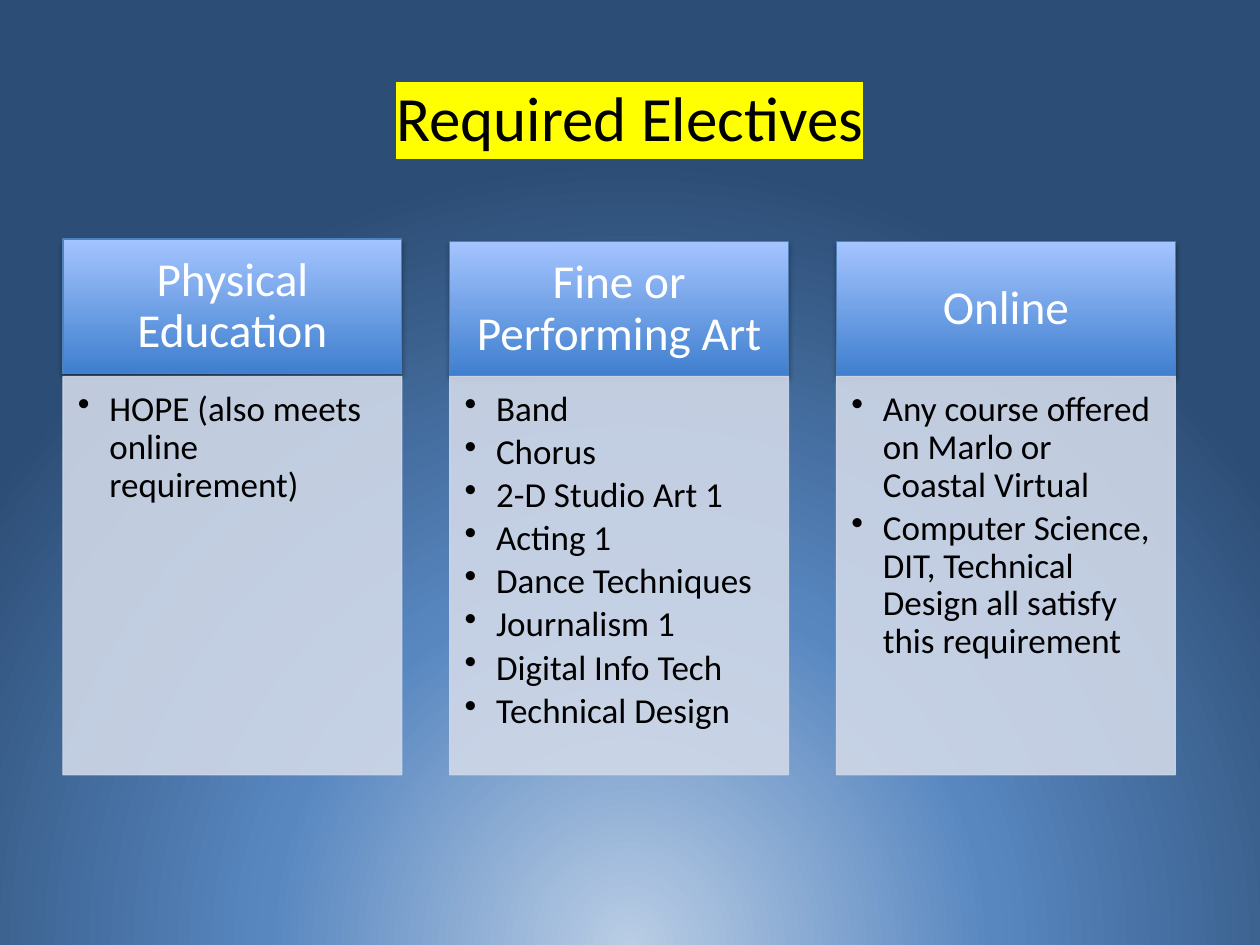
from lxml import etree
from pptx import Presentation
from pptx.dml.color import RGBColor
from pptx.enum.shapes import MSO_SHAPE
from pptx.enum.text import MSO_ANCHOR, PP_ALIGN
from pptx.oxml import parse_xml
from pptx.oxml.ns import nsdecls, qn
from pptx.util import Pt

RECTANGLE = MSO_SHAPE.RECTANGLE
CENTER, LEFT = PP_ALIGN.CENTER, PP_ALIGN.LEFT
MIDDLE, TOP = MSO_ANCHOR.MIDDLE, MSO_ANCHOR.TOP

FONT = "Calibri"
TITLE_ONLY = 5
COLUMN_LEFT, COLUMN_STEP, COLUMN_WIDTH = 36, 221, 193.6
HEADER_HEIGHT = 77
LIST_TOP, LIST_HEIGHT = 215.2, 227.5

# Header, header top, courses
ELECTIVES = [
    ("Physical Education", 136.6, ["HOPE (also meets online requirement)"]),
    ("Fine or Performing Art", 138.2, [
        "Band", "Chorus", "2-D Studio Art 1", "Acting 1", "Dance Techniques",
        "Journalism 1", "Digital Info Tech", "Technical Design"]),
    ("Online", 138.2, [
        "Any course offered on Marlo or Coastal Virtual",
        "Computer Science, DIT, Technical Design all satisfy this requirement"]),
]


def color(hex_code):
    return RGBColor.from_string(hex_code)


def set_background(slide, stops):
    """Fill the slide with a circular gradient centred below its lower edge."""
    slide.background.fill.solid()
    solid = slide._element.find(".//" + qn("p:bgPr")).find(qn("a:solidFill"))
    stop_xml = "".join(
        f'<a:gs pos="{position * 1000}"><a:srgbClr val="{hex_code}"/></a:gs>'
        for position, hex_code in stops)
    gradient = parse_xml(
        f'<a:gradFill {nsdecls("a")} rotWithShape="1"><a:gsLst>{stop_xml}</a:gsLst>'
        '<a:path path="circle"><a:fillToRect l="50000" t="130000" r="50000" b="-30000"/>'
        '</a:path></a:gradFill>')
    solid.getparent().replace(solid, gradient)


def set_alpha(shape, percent):
    """Apply the opacity to both the fill and the outline."""
    for rgb in shape._element.spPr.iter(qn("a:srgbClr")):
        etree.SubElement(rgb, qn("a:alpha")).set("val", str(percent * 1000))


def add_soft_shadow(shape):
    effects = shape._element.spPr.find(qn("a:effectLst"))
    effects.append(parse_xml(
        f'<a:outerShdw {nsdecls("a")} blurRad="{Pt(3.1)}" dist="{Pt(1.8)}" '
        'dir="5400000" rotWithShape="0"><a:srgbClr val="000000">'
        '<a:alpha val="35000"/></a:srgbClr></a:outerShdw>'))


def add_bullet(paragraph):
    properties = paragraph._p.get_or_add_pPr()
    properties.set("marL", str(Pt(18)))
    properties.set("indent", str(-Pt(18)))
    etree.SubElement(properties, qn("a:buChar")).set("char", "•")


def format_text(paragraph, size, hex_code, align):
    paragraph.alignment = align
    for run in paragraph.runs:
        run.font.name = FONT
        run.font.size = Pt(size)
        run.font.color.rgb = color(hex_code)


def add_title(slide, text):
    title = slide.shapes.title
    title.left, title.top, title.width, title.height = Pt(36), Pt(21.6), Pt(648), Pt(90)
    title.text_frame.text = text
    title.text_frame.vertical_anchor = MIDDLE
    paragraph = title.text_frame.paragraphs[0]
    format_text(paragraph, 36, "000000", CENTER)
    text_fill = paragraph.runs[0]._r.get_or_add_rPr().find(qn("a:solidFill"))
    text_fill.addnext(parse_xml(
        f'<a:highlight {nsdecls("a")}><a:srgbClr val="FFFF00"/></a:highlight>'))


def add_panel(slide, left, top, height, line_color, anchor, margins):
    panel = slide.shapes.add_shape(
        RECTANGLE, Pt(left), Pt(top), Pt(COLUMN_WIDTH), Pt(height))
    panel.shadow.inherit = False
    panel.line.color.rgb = color(line_color)
    panel.line.width = Pt(0.75)
    frame = panel.text_frame
    frame.word_wrap = True
    frame.vertical_anchor = anchor
    (frame.margin_left, frame.margin_top,
     frame.margin_right, frame.margin_bottom) = map(Pt, margins)
    return panel


def add_header(slide, left, top, text):
    header = add_panel(slide, left, top, HEADER_HEIGHT, "4F81BD", MIDDLE,
                       (15, 8.5, 15, 8.5))
    header.fill.gradient()
    header.fill.gradient_angle = 90
    for stop, hex_code in zip(header.fill.gradient_stops, ("3F7FCE", "A4C4FF")):
        stop.color.rgb = color(hex_code)
    add_soft_shadow(header)
    header.text_frame.text = text
    paragraph = header.text_frame.paragraphs[0]
    paragraph.line_spacing = 0.9
    format_text(paragraph, 27, "FFFFFF", CENTER)


def add_course_list(slide, left, courses):
    panel = add_panel(slide, left, LIST_TOP, LIST_HEIGHT, "D0D8E8", TOP,
                      (8.5, 8.5, 11.5, 12))
    panel.fill.solid()
    panel.fill.fore_color.rgb = color("D0D8E8")
    set_alpha(panel, 90)
    panel.text_frame.text = "\n".join(courses)
    for paragraph in panel.text_frame.paragraphs:
        paragraph.line_spacing = 0.9
        paragraph.space_after = Pt(3)
        format_text(paragraph, 20, "000000", LEFT)
        add_bullet(paragraph)


def main():
    presentation = Presentation()
    presentation.slide_width, presentation.slide_height = Pt(720), Pt(540)
    slide = presentation.slides.add_slide(presentation.slide_layouts[TITLE_ONLY])
    set_background(slide, [(0, "B9CDE5"), (46, "5887C0"), (100, "2C4D75")])
    add_title(slide, "Required Electives")
    for index, (header, header_top, courses) in enumerate(ELECTIVES):
        left = COLUMN_LEFT + index * COLUMN_STEP
        add_header(slide, left, header_top, header)
        add_course_list(slide, left, courses)
    presentation.save("out.pptx")


if __name__ == "__main__":
    main()
